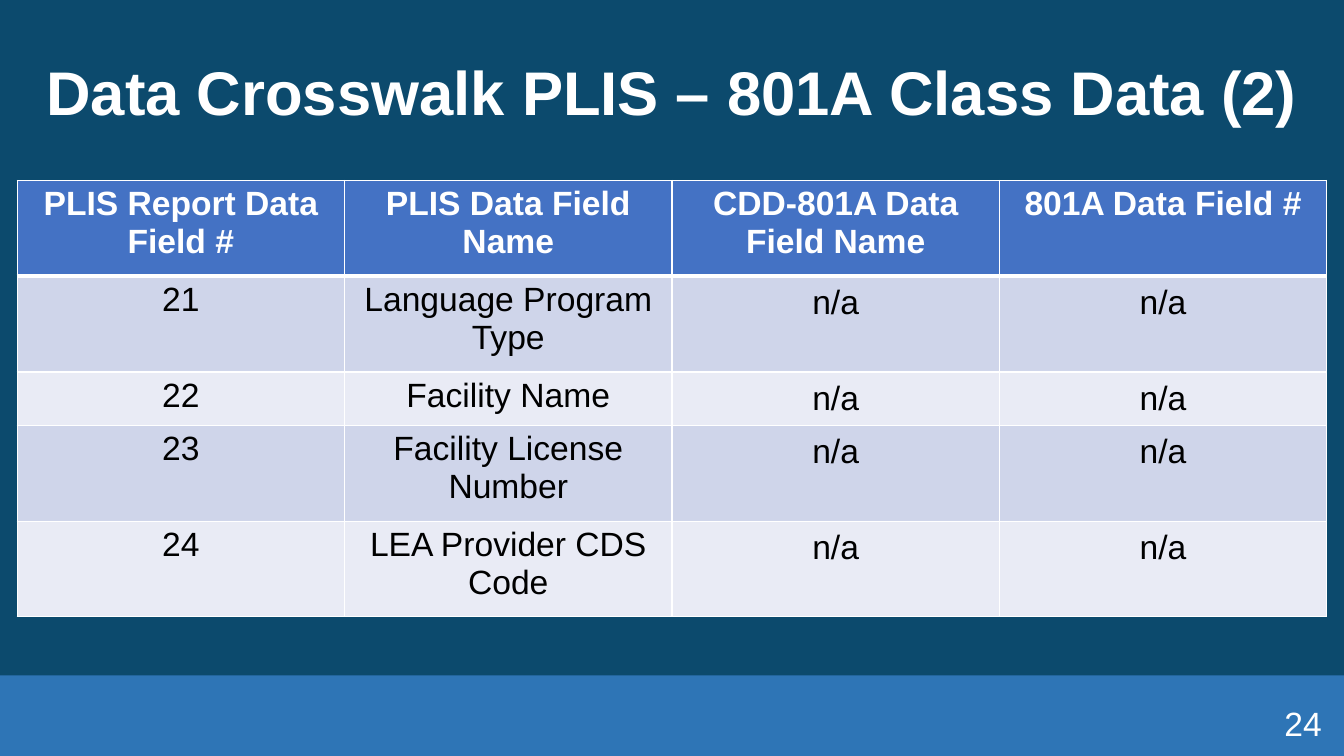
from dataclasses import dataclass

from lxml.etree import SubElement as Sub
from pptx import Presentation
from pptx.dml.color import RGBColor as RGB
from pptx.enum.shapes import MSO_SHAPE as Shape
from pptx.enum.text import MSO_ANCHOR as Anchor, MSO_AUTO_SIZE as Fit, PP_ALIGN as Align
from pptx.oxml.ns import qn
from pptx.util import Inches, Pt


@dataclass(frozen=True)
class Theme:
    """Colours, font and type sizes of the slide."""
    back: str = "0C4A6D"
    band: str = "2E75B6"
    head: str = "4472C4"
    odd: str = "CFD5EA"
    even: str = "E9EBF5"
    light: str = "FFFFFF"
    dark: str = "000000"
    font: str = "Arial"
    big: int = 44
    body: int = 24


THEME = Theme()
WIDE, HIGH = 13.33, 7.5
EDGE = 0.17
ROWS = [
    ("PLIS Report Data Field #", "PLIS Data Field Name", "CDD-801A Data Field Name", "801A Data Field #"),
    ("21", "Language Program Type", "n/a", "n/a"),
    ("22", "Facility Name", "n/a", "n/a"),
    ("23", "Facility License Number", "n/a", "n/a"),
    ("24", "LEA Provider CDS Code", "n/a", "n/a"),
]
TALL, SHORT = 0.95, 0.53
HEIGHTS = [TALL, TALL, SHORT, TALL, TALL]


def paint(fill, tone):
    """Give a fill one solid colour."""
    fill.solid()
    fill.fore_color.rgb = RGB.from_string(tone)


def write(frame, text, size, tone, align, bold=False):
    """Set one styled paragraph and return it."""
    frame.text = text
    para = frame.paragraphs[0]
    para.alignment = align
    font = para.runs[0].font
    font.name, font.size, font.bold = THEME.font, Pt(size), bold
    font.color.rgb = RGB.from_string(tone)
    return para


def rule(cell, side, width):
    """Draw one white border of a cell."""
    props = cell._tc.get_or_add_tcPr()
    line = Sub(props, qn(f"a:{side}"), w=str(Pt(width)))
    Sub(Sub(line, qn("a:solidFill")), qn("a:srgbClr"), val=THEME.light)


def add_title(slide, box, text):
    """Place the slide title in its box."""
    title = slide.shapes.title
    title.left, title.top, title.width, title.height = map(Inches, box)
    frame = title.text_frame
    frame.word_wrap, frame.auto_size = True, Fit.NONE
    frame.vertical_anchor = Anchor.MIDDLE
    write(frame, text, THEME.big, THEME.light, Align.CENTER, True).line_spacing = 0.9


def add_grid(slide, box):
    """Place the crosswalk table with equal columns."""
    table = slide.shapes.add_table(len(ROWS), len(ROWS[0]), *map(Inches, box)).table
    for col in table.columns:
        col.width = Inches(box[2] / len(ROWS[0]))
    for r, (row, high) in enumerate(zip(ROWS, HEIGHTS)):
        table.rows[r].height = Inches(high)
        first = r == 0
        fill = THEME.head if first else THEME.odd if r % 2 else THEME.even
        tone = THEME.light if first else THEME.dark
        for c, text in enumerate(row):
            cell = table.cell(r, c)
            for side in ("lnL", "lnR", "lnT", "lnB"):
                thick = (r, side) in ((0, "lnB"), (1, "lnT"))
                rule(cell, side, 3 if thick else 1)
            paint(cell.fill, fill)
            para = write(cell.text_frame, text, THEME.body, tone, Align.CENTER, first)
            if not first and c > 1:
                para.line_spacing, para.space_after = 1.07, Pt(8)


def add_foot(slide, box, number):
    """Place the bottom band and the page number on it."""
    left, top, width, high = box
    band = slide.shapes.add_shape(Shape.RECTANGLE, *map(Inches, box))
    band.shadow.inherit = False
    paint(band.fill, THEME.band)
    band.line.fill.background()
    wide, deep = 0.99, 0.37
    spot = (left + width - wide - 0.22, top + high - deep - 0.13, wide, deep)
    frame = slide.shapes.add_textbox(*map(Inches, spot)).text_frame
    frame.word_wrap = True
    frame.margin_left = frame.margin_right = frame.margin_top = frame.margin_bottom = 0
    frame.vertical_anchor = Anchor.BOTTOM
    write(frame, number, THEME.body, THEME.light, Align.RIGHT)


def main():
    """Build and save the slide."""
    deck = Presentation()
    deck.slide_width, deck.slide_height = Inches(WIDE), Inches(HIGH)
    slide = deck.slides.add_slide(deck.slide_layouts[5])
    paint(slide.background.fill, THEME.back)
    add_foot(slide, (0, HIGH - 0.8, WIDE, 0.8), "24")
    add_title(slide, (EDGE, 0.22, 13, 1.45), "Data Crosswalk PLIS – 801A Class Data (2)")
    add_grid(slide, (EDGE, 1.79, 12.99, sum(HEIGHTS)))
    deck.save("out.pptx")


if __name__ == "__main__":
    main()
